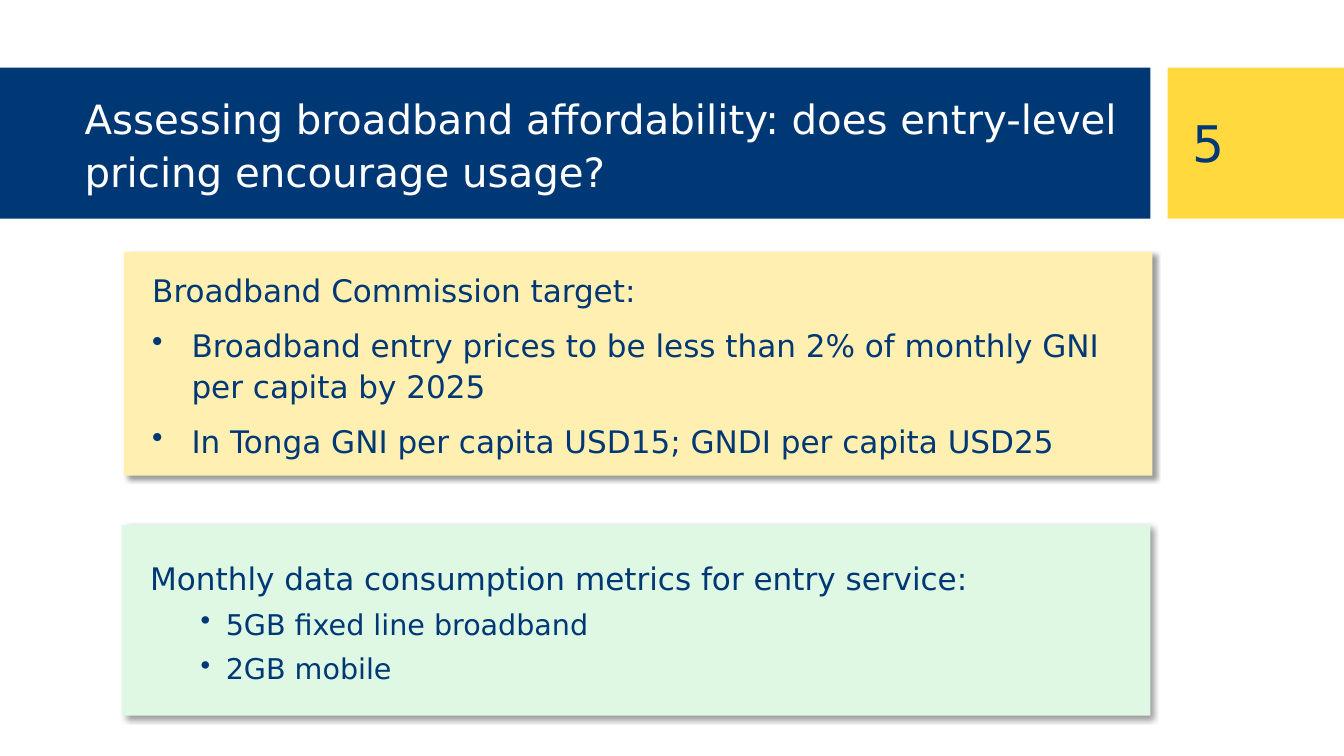
from dataclasses import dataclass

from lxml import etree
from pptx import Presentation, util as u
from pptx.dml.color import RGBColor
from pptx.enum import shapes, text
from pptx.oxml.ns import qn

FONT = "DejaVu Sans"
NAVY, YELLOW, WHITE = "003775", "FFD93D", "FFFFFF"
BAND_TOP, BAND_HEIGHT = 0.67, 1.5


@dataclass
class Line:
    words: str
    size: float = 22.2
    space_before: float = 10
    level: int = 0
    indent: float = 0
    hanging: float = 0


@dataclass
class Panel:
    left: float
    top: float
    height: float
    fill: str
    lines: list[Line]
    width: float = 10.2


PANELS = [
    Panel(1.23, 2.5, 2.22, "FFF0B1", [
        Line("Broadband Commission target:", space_before=0),
        Line("Broadband entry prices to be less than 2% of monthly GNI per capita by 2025",
             indent=0.39, hanging=0.39),
        Line("In Tonga GNI per capita USD15; GNDI per capita USD25",
             indent=0.39, hanging=0.39),
    ]),
    Panel(1.21, 5.21, 1.89, "DFF8E3", [
        Line("Monthly data consumption metrics for entry service:", space_before=0),
        Line("5GB fixed line broadband", 20.4, 5, 1, 0.75, 0.25),
        Line("2GB mobile", 20.4, 5, 1, 0.75, 0.25),
    ]),
]


def rgb(value: str) -> RGBColor:
    return RGBColor.from_string(value)


def add_box(slide, left: float, top: float, width: float, height: float, fill: str):
    box = slide.shapes.add_shape(
        shapes.MSO_SHAPE.RECTANGLE,
        u.Inches(left), u.Inches(top), u.Inches(width), u.Inches(height))
    box.shadow.inherit = False
    box.fill.solid()
    box.fill.fore_color.rgb = rgb(fill)
    box.line.fill.background()
    return box


def add_soft_shadow(box) -> None:
    """Cast a 40% black shadow towards the lower right."""
    effects = box._element.spPr.find(qn("a:effectLst"))
    shadow = etree.SubElement(
        effects, qn("a:outerShdw"), blurRad=str(u.Pt(4)), dist=str(u.Pt(3)),
        dir=str(45 * 60000), algn="tl", rotWithShape="0")
    black = etree.SubElement(shadow, qn("a:srgbClr"), val="000000")
    etree.SubElement(black, qn("a:alpha"), val="40000")


def write(frame, lines: list[Line], *, color: str = NAVY,
          line_spacing: float = 1.1, left_inset: float = 0.1) -> None:
    frame.word_wrap = True
    frame.vertical_anchor = text.MSO_ANCHOR.MIDDLE
    frame.margin_left = u.Inches(left_inset)
    for index, line in enumerate(lines):
        paragraph = frame.paragraphs[0] if index == 0 else frame.add_paragraph()
        paragraph.level = line.level
        paragraph.alignment = text.PP_ALIGN.LEFT
        if line.hanging:
            properties = paragraph._p.get_or_add_pPr()
            properties.set("marL", str(u.Inches(line.indent)))
            properties.set("indent", str(-u.Inches(line.hanging)))
            etree.SubElement(properties, qn("a:buChar"), char="•")
        paragraph.line_spacing = line_spacing
        paragraph.space_before = u.Pt(line.space_before)
        run = paragraph.add_run()
        run.text = line.words
        run.font.name = FONT
        run.font.size = u.Pt(line.size)
        run.font.color.rgb = rgb(color)


def add_label(slide, left: float, top: float, width: float, height: float,
              line: Line, **style) -> None:
    label = slide.shapes.add_textbox(
        u.Inches(left), u.Inches(top), u.Inches(width), u.Inches(height))
    write(label.text_frame, [line], **style)


def main() -> None:
    deck = Presentation()
    deck.slide_width, deck.slide_height = u.Inches(13.33), u.Inches(7.5)
    slide = deck.slides.add_slide(deck.slide_layouts[6])

    add_box(slide, 0, BAND_TOP, 11.41, BAND_HEIGHT, NAVY)
    add_box(slide, 11.58, BAND_TOP, 1.75, BAND_HEIGHT, YELLOW)
    add_label(slide, 0.74, 0.82, 10.51, 1.18, Line(
        "Assessing broadband affordability: does entry-level pricing encourage usage?",
        28.8, space_before=0), color=WHITE)

    for panel in PANELS:
        box = add_box(slide, panel.left, panel.top, panel.width, panel.height, panel.fill)
        add_soft_shadow(box)
        write(box.text_frame, panel.lines, left_inset=0.28)

    add_label(slide, 11.73, 0.82, 1.26, 1.19, Line("5", 36, space_before=0), line_spacing=1.0)
    deck.save("out.pptx")


if __name__ == "__main__":
    main()
